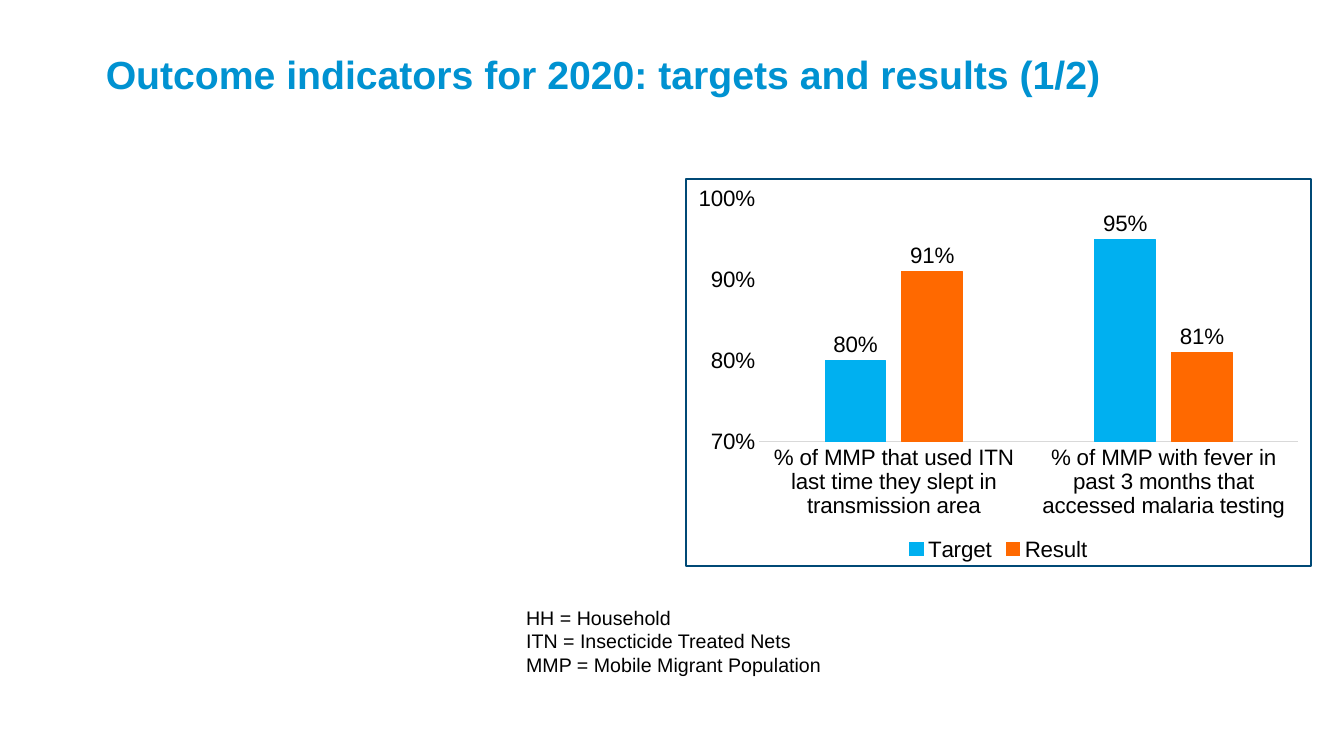
from lxml import etree
from pptx import Presentation
from pptx import util as u
from pptx.chart import data as chart_data
from pptx.dml.color import RGBColor
from pptx.enum import chart as chart_enum
from pptx.enum import text
from pptx.oxml import parse_xml
from pptx.oxml.ns import nsdecls

TITLE_BLUE = RGBColor(0x00, 0x92, 0xD1)
TARGET_BLUE = RGBColor(0x00, 0xB0, 0xF0)
RESULT_ORANGE = RGBColor(0xFF, 0x69, 0x00)
BORDER_NAVY = RGBColor(0x00, 0x49, 0x76)
AXIS_GREY = RGBColor(0xD9, 0xD9, 0xD9)
BLACK = RGBColor(0x00, 0x00, 0x00)
WHITE = RGBColor(0xFF, 0xFF, 0xFF)

COLUMNS, ROWS = 160, 90


class IndicatorSlide:
    font_name = "Arial"
    percent = "0%"

    def __init__(self, presentation):
        self.column = presentation.slide_width / COLUMNS
        self.row = presentation.slide_height / ROWS
        self.slide = presentation.slides.add_slide(presentation.slide_layouts[6])

    def place(self, left, top, width, height):
        return (round(left * self.column), round(top * self.row),
                round(width * self.column), round(height * self.row))

    def style(self, font, size, color=BLACK, bold=False):
        font.name = self.font_name
        font.size = u.Pt(size)
        font.bold = bold
        font.color.rgb = color

    def text_box(self, area, lines, size, color=BLACK, bold=False):
        frame = self.slide.shapes.add_textbox(*self.place(*area)).text_frame
        frame.word_wrap = True
        frame.text = "\n".join(lines)
        for paragraph in frame.paragraphs:
            for run in paragraph.runs:
                self.style(run.font, size, color, bold)
        return frame

    def title(self, area, wording):
        frame = self.text_box(area, [wording], 28, TITLE_BLUE, True)
        frame.vertical_anchor = text.MSO_ANCHOR.MIDDLE
        frame.margin_left = frame.margin_right = 0
        frame.margin_top = frame.margin_bottom = 0

    def column_chart(self, area, categories, series, size):
        data = chart_data.CategoryChartData(number_format=self.percent)
        data.categories = categories
        for name, values, _ in series:
            data.add_series(name, values)
        chart = self.slide.shapes.add_chart(
            chart_enum.XL_CHART_TYPE.COLUMN_CLUSTERED, *self.place(*area), data).chart
        self.style(chart.font, size)
        chart.has_title = False
        chart.has_legend = True
        chart.legend.position = chart_enum.XL_LEGEND_POSITION.BOTTOM
        chart.legend.include_in_layout = False
        self.style(chart.legend.font, size)
        self.axes(chart, size)

        plot = chart.plots[0]
        plot.gap_width, plot.overlap = 219, -27
        plot.vary_by_categories = False
        for bars, (_, _, color) in zip(plot.series, series):
            bars.format.fill.solid()
            bars.format.fill.fore_color.rgb = color
            bars.format.line.color.rgb = color
            bars.format.line.width = u.Pt(0.75)
            labels = bars.data_labels
            labels.show_value = True
            labels.number_format = self.percent
            labels.number_format_is_linked = False
            labels.position = chart_enum.XL_LABEL_POSITION.OUTSIDE_END
            self.style(labels.font, size)
        self.frame_chart(chart)

    def axes(self, chart, size):
        for axis in (chart.category_axis, chart.value_axis):
            axis.major_tick_mark = chart_enum.XL_TICK_MARK.NONE
            axis.minor_tick_mark = chart_enum.XL_TICK_MARK.NONE
            axis.has_major_gridlines = False
            self.style(axis.tick_labels.font, size)
        chart.category_axis.format.line.color.rgb = AXIS_GREY
        chart.category_axis.format.line.width = u.Pt(0.75)
        scale = chart.value_axis
        scale.format.line.fill.background()
        scale.minimum_scale, scale.maximum_scale, scale.major_unit = 0.7, 1, 0.1
        scale.tick_labels.number_format = self.percent
        scale.tick_labels.number_format_is_linked = False

    def frame_chart(self, chart):
        chart.element.find("{*}chart").addnext(parse_xml(
            f'<c:spPr {nsdecls("c", "a")}>'
            f'<a:solidFill><a:srgbClr val="{WHITE}"/></a:solidFill>'
            f'<a:ln w="{u.Pt(1)}"><a:solidFill><a:srgbClr val="{BORDER_NAVY}"/>'
            '</a:solidFill></a:ln></c:spPr>'))


def main():
    presentation = Presentation()
    presentation.slide_width = u.Inches(13.33)
    presentation.slide_height = u.Inches(7.5)
    page = IndicatorSlide(presentation)
    page.title((12.6, 3.6, 134.8, 10.4),
               "Outcome indicators for 2020: targets and results (1/2)")
    page.column_chart(
        (81.6, 21.25, 74.55, 46.2),
        ["% of MMP that used ITN last time they slept in transmission area",
         "% of MMP with fever in past 3 months that accessed malaria testing"],
        [("Target", (0.8, 0.95), TARGET_BLUE),
         ("Result", (0.91, 0.81), RESULT_ORANGE)],
        16)
    page.text_box((61.45, 71.5, 75.6, 9.7),
                  ["HH = Household",
                   "ITN = Insecticide Treated Nets",
                   "MMP = Mobile Migrant Population"], 14)
    presentation.save("out.pptx")


if __name__ == "__main__":
    main()
